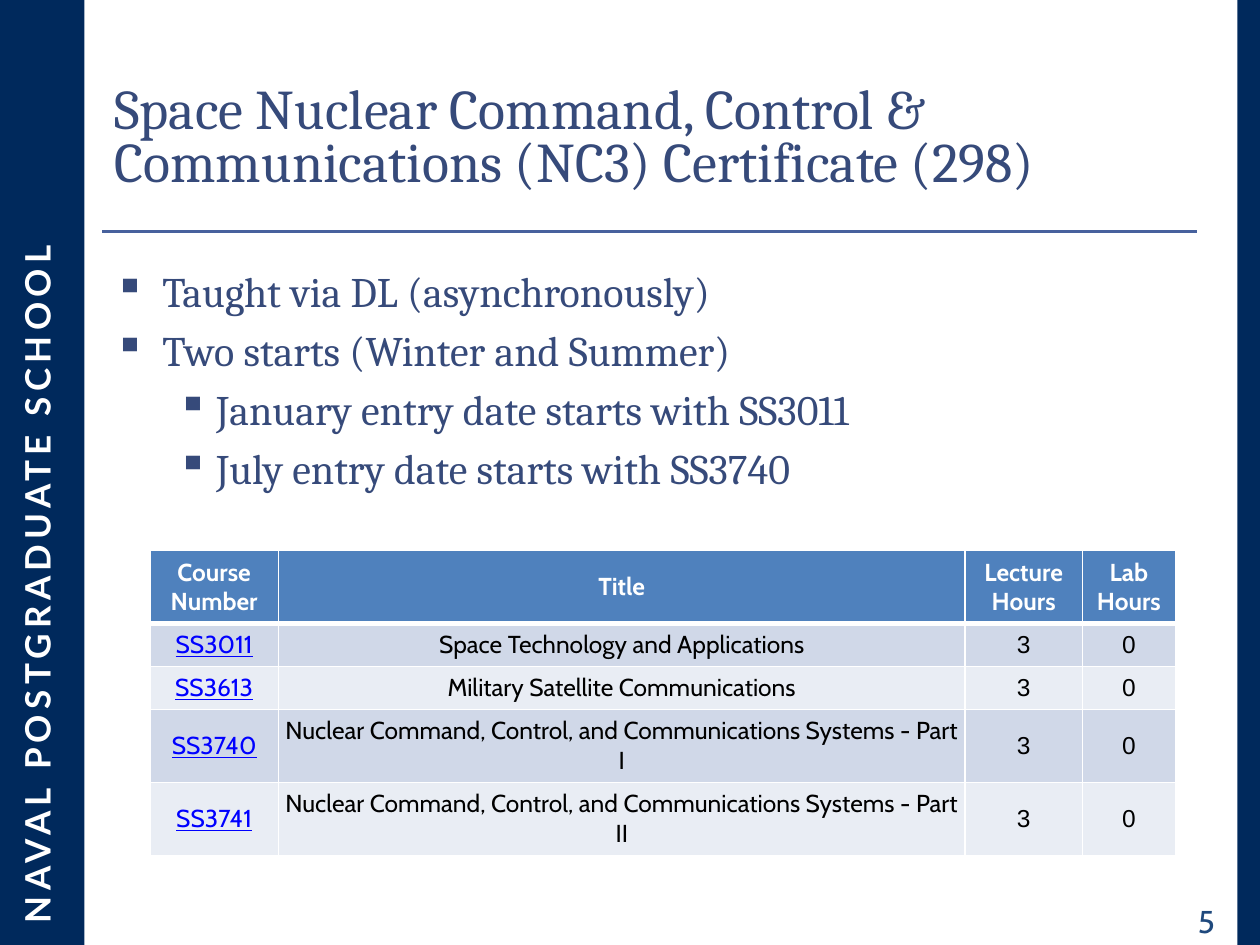
from lxml.etree import SubElement
from pptx import Presentation
from pptx.dml.color import RGBColor
from pptx.enum.shapes import MSO_CONNECTOR, MSO_SHAPE
from pptx.enum.text import MSO_ANCHOR, PP_ALIGN
from pptx.oxml.ns import qn
from pptx.util import Inches, Pt

COLORS = {
    "navy": "00295C", "rule": "47619D", "heading": "364A7A", "number": "1F497D",
    "header": "4F81BD", "odd": "D0D8E8", "even": "E9EDF4",
    "link": "0000FF", "white": "FFFFFF", "black": "000000",
}


def color(name):
    return RGBColor.from_string(COLORS[name])


def write(paragraph, text, *, font="Cabin", size=14, ink="black", bold=False,
          underline=False, align=PP_ALIGN.LEFT, tracking=0, line_spacing=None,
          space_before=0, bullet=None, indent=(0, 0)):
    properties = paragraph._p.get_or_add_pPr()
    if bullet:
        margin, hanging = indent
        properties.set("marL", str(Inches(margin)))
        properties.set("indent", str(Inches(hanging)))
        SubElement(properties, qn("a:buChar")).set("char", bullet)
    paragraph.alignment = align
    paragraph.space_before = Pt(space_before)
    if line_spacing:
        paragraph.line_spacing = line_spacing
    run = paragraph.add_run()
    run.text = text
    run.font.name = font
    run.font.size = Pt(size)
    run.font.bold = bold
    run.font.underline = underline
    run.font.color.rgb = color(ink)
    if tracking:
        run._r.get_or_add_rPr().set("spc", str(tracking * 100))


class SlideBuilder:
    """Draws styled elements on a grid of 100 columns by 75 rows."""

    def __init__(self, presentation):
        self.column = presentation.slide_width // 100
        self.row = presentation.slide_height // 75
        self.slide = presentation.slides.add_slide(presentation.slide_layouts[6])
        self.shapes = self.slide.shapes

    def place(self, left, top, width, height):
        return (round(left * self.column), round(top * self.row),
                round(width * self.column), round(height * self.row))

    def background(self, name):
        fill = self.slide.background.fill
        fill.solid()
        fill.fore_color.rgb = color(name)

    def panel(self, area, name):
        shape = self.shapes.add_shape(MSO_SHAPE.RECTANGLE, *self.place(*area))
        shape.shadow.inherit = False
        shape.fill.solid()
        shape.fill.fore_color.rgb = color(name)
        shape.line.fill.background()

    def rule(self, left, right, top, name, weight):
        start_x, start_y, end_x, end_y = self.place(left, top, right, top)
        connector = self.shapes.add_connector(
            MSO_CONNECTOR.STRAIGHT, start_x, start_y, end_x, end_y)
        connector.line.color.rgb = color(name)
        connector.line.width = Pt(weight)
        SubElement(connector._element.spPr, qn("a:effectLst"))

    def text(self, area, items, anchor=MSO_ANCHOR.TOP, rotation=0):
        shape = self.shapes.add_textbox(*self.place(*area))
        shape.rotation = rotation
        frame = shape.text_frame
        frame.word_wrap = True
        frame.vertical_anchor = anchor
        for position, (words, style) in enumerate(items):
            paragraph = frame.add_paragraph() if position else frame.paragraphs[0]
            write(paragraph, words, **style)

    def border(self, cell, bottom):
        properties = cell._tc.get_or_add_tcPr()
        for side, weight in (("L", 1), ("R", 1), ("T", 1), ("B", bottom)):
            line = SubElement(properties, qn(f"a:ln{side}"))
            line.set("w", str(Pt(weight)))
            fill = SubElement(line, qn("a:solidFill"))
            SubElement(fill, qn("a:srgbClr")).set("val", COLORS["white"])

    def cell(self, cell, text, fill, bottom=1, **style):
        cell.margin_left = cell.margin_right = Inches(0.05)
        cell.margin_top = cell.margin_bottom = Inches(0.05)
        cell.vertical_anchor = MSO_ANCHOR.MIDDLE
        self.border(cell, bottom)
        cell.fill.solid()
        cell.fill.fore_color.rgb = color(fill)
        write(cell.text_frame.paragraphs[0], text, align=PP_ALIGN.CENTER, **style)

    def table(self, left, top, widths, heights, header, records, styles):
        area = self.place(left, top, sum(widths), sum(heights))
        table = self.shapes.add_table(len(heights), len(widths), *area).table
        table.first_row = table.horz_banding = False
        for column, width in zip(table.columns, widths):
            column.width = round(width * self.column)
        for row, height in zip(table.rows, heights):
            row.height = round(height * self.row)
        for index, label in enumerate(header):
            self.cell(table.cell(0, index), label, "header", bottom=3,
                      ink="white", bold=True)
        for number, record in enumerate(records, 1):
            band = "odd" if number % 2 else "even"
            top_line = zip(record, styles)
            for index, (value, style) in enumerate(top_line):
                self.cell(table.cell(number, index), value, band, **style)


def main():
    presentation = Presentation()
    presentation.slide_width = Inches(10)
    presentation.slide_height = Inches(7.5)
    builder = SlideBuilder(presentation)

    builder.background("navy")
    builder.panel((6.7, 0, 91.5, 75), "white")
    builder.text((-31.6, 37.5, 69.1, 4.4), [("NAVAL POSTGRADUATE SCHOOL", dict(
        font="Lato", size=20, ink="white", bold=True, tracking=3,
        align=PP_ALIGN.JUSTIFY))], rotation=270)
    builder.rule(8.1, 95, 18.4, "rule", 1.5)
    builder.text((92.7, 71.1, 4.7, 4), [
        ("5", dict(size=18, ink="number", align=PP_ALIGN.RIGHT))])

    heading = dict(font="Cambria", ink="heading")
    builder.text(
        (8.1, 6, 86.9, 10.2),
        [("Space Nuclear Command, Control & Communications (NC3) Certificate (298)",
          dict(heading, size=32, line_spacing=0.8))],
        anchor=MSO_ANCHOR.MIDDLE)

    indents = [(0.38, -0.38), (0.81, -0.31)]
    points = [
        ("Taught via DL (asynchronously)", 0),
        ("Two starts (Winter and Summer)", 0),
        ("January entry date starts with SS3011", 1),
        ("July entry date starts with SS3740", 1),
    ]
    builder.text((8.1, 20.6, 86.9, 51.9), [
        (words, dict(heading, size=24, bullet="▪", indent=indents[level],
                     space_before=4.8 if position else 0))
        for position, (words, level) in enumerate(points)])

    hours = dict(font="Arial")
    courses = [
        ("SS3011", "Space Technology and Applications"),
        ("SS3613", "Military Satellite Communications"),
        ("SS3740", "Nuclear Command, Control, and Communications Systems - Part I"),
        ("SS3741", "Nuclear Command, Control, and Communications Systems - Part II"),
    ]
    builder.table(
        11.9, 43.7, widths=[10.2, 54.5, 9.3, 7.4], heights=[5.8, 3.4, 3.4, 5.8, 5.8],
        header=["Course Number", "Title", "Lecture Hours", "Lab Hours"],
        records=[(*course, "3", "0") for course in courses],
        styles=[dict(ink="link", underline=True), {}, hours, hours])

    presentation.save("out.pptx")


if __name__ == "__main__":
    main()
